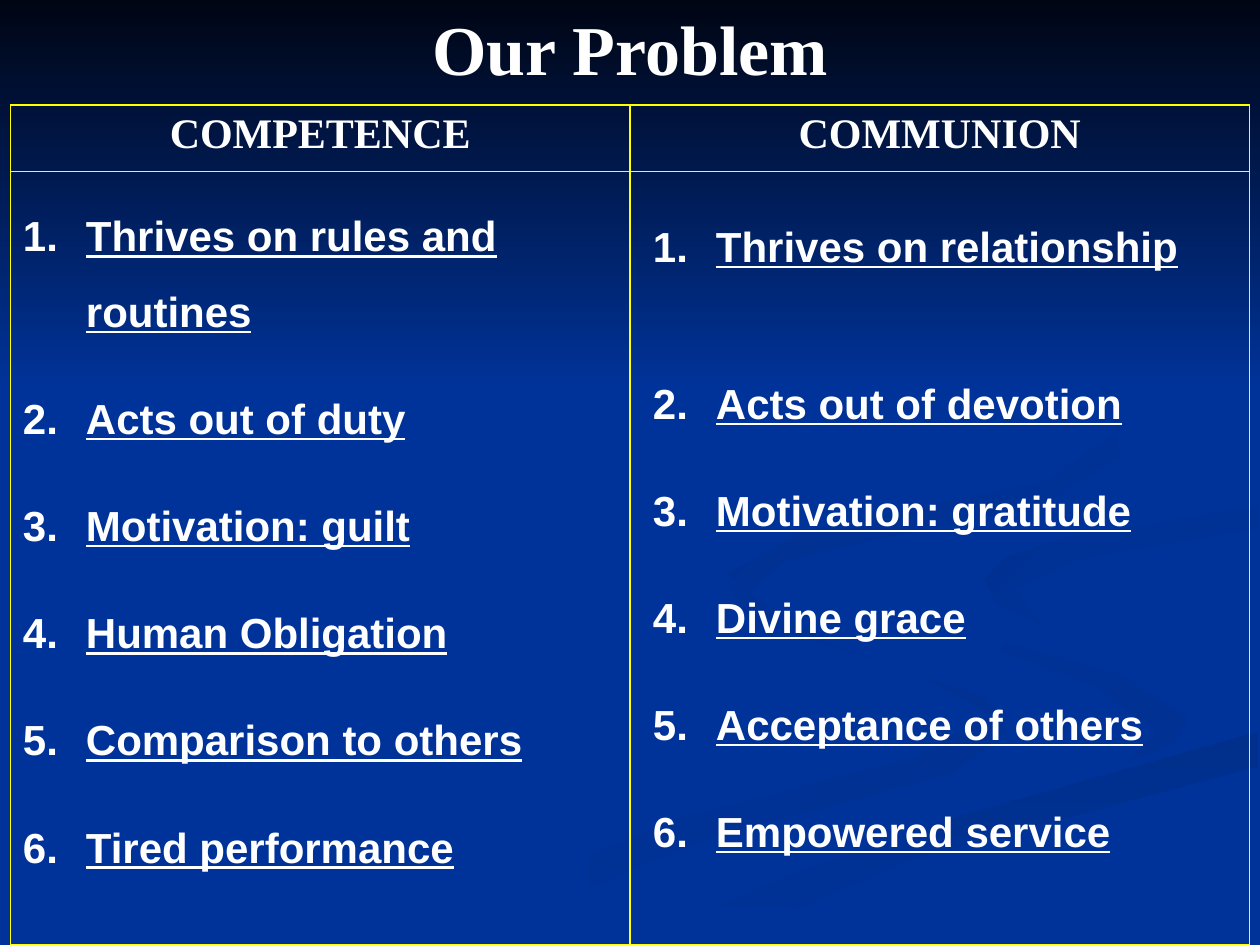
from lxml import etree
from pptx import Presentation
from pptx.dml.color import RGBColor
from pptx.enum.text import MSO_ANCHOR, PP_ALIGN
from pptx.oxml.ns import qn
from pptx.util import Pt

CENTER = PP_ALIGN.CENTER
MIDDLE = MSO_ANCHOR.MIDDLE
WHITE, YELLOW, BLUE, NIGHT = "FFFFFF", "FFFF00", "003399", "000514"
SLIDE_WIDTH, SLIDE_HEIGHT = 720, 540
HEADING = {"name": "Times New Roman", "size": Pt(24), "bold": True}
TITLE = {**HEADING, "size": Pt(40)}
ITEM = {"name": "Arial", "size": Pt(24), "bold": True, "underline": True}

COLUMNS = {
    "COMPETENCE": [
        "Thrives on rules and routines", "Acts out of duty", "Motivation: guilt",
        "Human Obligation", "Comparison to others", "Tired performance"],
    "COMMUNION": [
        "Thrives on relationship", "Acts out of devotion", "Motivation: gratitude",
        "Divine grace", "Acceptance of others", "Empowered service"],
}

# Background ribbons, back to front: start colour, end colour, clockwise angle, outline
RIBBONS = [
    (BLUE, "003193", 0, [
        (562, 398), (476, 369), (414, 330), (427, 354), (524, 385), (566, 408),
        (523, 433), (388, 467), (216, 539), (260, 539), (406, 479), (544, 442),
        (576, 418)]),
    (BLUE, "003193", 45, [
        (679, 410), (639, 385), (557, 362), (521, 334), (537, 360), (625, 392),
        (661, 418), (644, 436), (671, 424)]),
    ("002F8C", BLUE, 90, [
        (362, 539), (411, 539), (520, 491), (719, 438), (719, 418), (550, 466),
        (454, 499)]),
    ("003091", BLUE, 45, [
        (562, 331), (569, 344), (595, 357), (580, 337), (618, 319), (719, 302),
        (719, 289), (611, 307), (575, 318)]),
    ("002F8E", BLUE, 45, [
        (492, 310), (594, 289), (640, 261), (634, 221), (549, 168), (626, 215),
        (640, 246), (598, 275), (459, 304), (416, 328), (448, 360), (427, 338),
        (449, 320)]),
]


def color(hex_code):
    return RGBColor.from_string(hex_code)


def write(paragraph, text, font_format):
    run = paragraph.add_run()
    run.text = text
    run.font.color.rgb = color(WHITE)
    for key, value in font_format.items():
        setattr(run.font, key, value)


def add_gradient_outline(slide, start, end, angle, outline):
    """Draw a closed outline; the angle runs clockwise, 90 being downwards."""
    builder = slide.shapes.build_freeform(*outline[0], scale=Pt(1))
    builder.add_line_segments(outline[1:], close=True)
    shape = builder.convert_to_shape()
    shape.shadow.inherit = False
    shape.line.fill.background()
    shape.fill.gradient()
    shape.fill.gradient_angle = (360 - angle) % 360
    for stop, position, hex_code in zip(shape.fill.gradient_stops, (0, 1), (start, end)):
        stop.position = position
        stop.color.rgb = color(hex_code)


def add_backdrop(slide, width, sky_height):
    slide.background.fill.solid()
    slide.background.fill.fore_color.rgb = color(BLUE)
    for ribbon in RIBBONS:
        add_gradient_outline(slide, *ribbon)
    sky = [(0, 0), (0, sky_height), (width, sky_height), (width, 0)]
    add_gradient_outline(slide, NIGHT, BLUE, 90, sky)


def add_text_frame(slide, box):
    frame = slide.shapes.add_textbox(*map(Pt, box)).text_frame
    frame.word_wrap = True
    return frame


def add_title(slide, box, text):
    frame = add_text_frame(slide, box)
    frame.vertical_anchor = MIDDLE
    frame.paragraphs[0].alignment = CENTER
    write(frame.paragraphs[0], text, TITLE)


def outline_cell(cell):
    cell.fill.background()
    properties = cell._tc.get_or_add_tcPr()
    for index, side in enumerate(("a:lnL", "a:lnR", "a:lnT", "a:lnB")):
        border = etree.Element(qn(side), w=str(Pt(1)))
        fill = etree.SubElement(border, qn("a:solidFill"))
        etree.SubElement(fill, qn("a:srgbClr"), val=YELLOW)
        properties.insert(index, border)


def add_comparison_table(slide, box, headings, header_height):
    table = slide.shapes.add_table(2, len(headings), *map(Pt, box)).table
    table.first_row = table.horz_banding = False
    table.rows[0].height = Pt(header_height)
    table.rows[1].height = Pt(box[3] - header_height)
    for cell in table.iter_cells():
        outline_cell(cell)
    for cell, heading in zip(table.rows[0].cells, headings):
        paragraph = cell.text_frame.paragraphs[0]
        paragraph.alignment = CENTER
        write(paragraph, heading, HEADING)


def add_numbered_list(slide, box, items, first_gap):
    """Number the items; first_gap is the space after the first one."""
    frame = add_text_frame(slide, box)
    for index, item in enumerate(items):
        paragraph = frame.add_paragraph() if index else frame.paragraphs[0]
        paragraph.line_spacing = 1.5
        paragraph.space_after = Pt(18 if index else first_gap)
        properties = paragraph._p.get_or_add_pPr()
        properties.set("marL", str(Pt(36)))
        properties.set("indent", str(Pt(-36)))
        etree.SubElement(properties, qn("a:buFont"), typeface="+mj-lt")
        etree.SubElement(properties, qn("a:buAutoNum"), type="arabicPeriod")
        write(paragraph, item, ITEM)


def main():
    deck = Presentation()
    deck.slide_width, deck.slide_height = Pt(SLIDE_WIDTH), Pt(SLIDE_HEIGHT)
    slide = deck.slides.add_slide(deck.slide_layouts[6])
    add_backdrop(slide, SLIDE_WIDTH, 222)
    add_title(slide, (30, -24, 660, 102), "Our Problem")
    add_comparison_table(slide, (6, 60, 708, 480), COLUMNS, 38)
    competence, communion = COLUMNS.values()
    add_numbered_list(slide, (6, 102, 348, 398), competence, 18)
    add_numbered_list(slide, (366, 108, 348, 398), communion, 46.5)
    deck.save("out.pptx")


if __name__ == "__main__":
    main()
